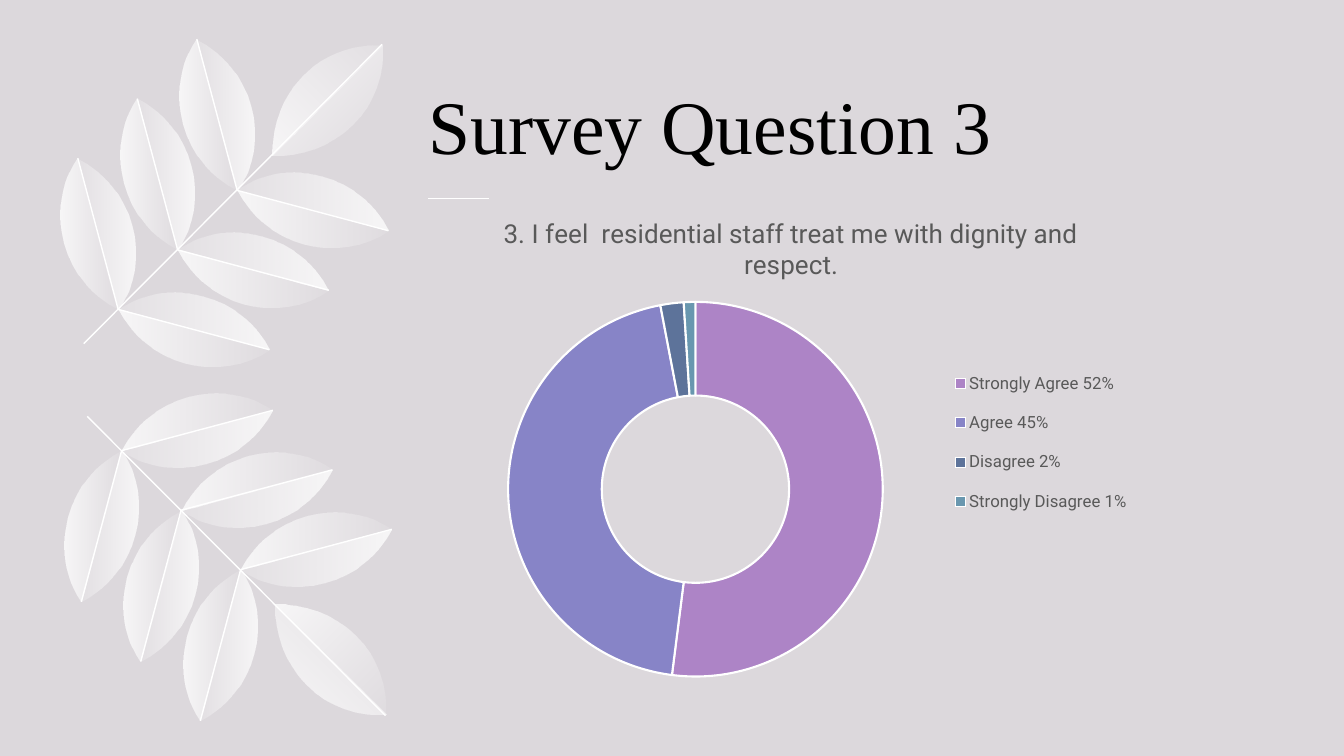
"""Build the survey question slide: two leafy branches, a title and a doughnut chart."""
from math import sqrt
from lxml.etree import SubElement
from pptx import Presentation
from pptx.chart.data import CategoryChartData
from pptx.dml.color import RGBColor
from pptx.enum.chart import XL_CHART_TYPE as ChartType, XL_LEGEND_POSITION as LegendPosition
from pptx.enum.shapes import MSO_CONNECTOR as Connector
from pptx.enum.text import MSO_ANCHOR as Anchor, PP_ALIGN as Align
from pptx.oxml import parse_xml
from pptx.oxml.ns import nsdecls, qn
from pptx.util import Pt

QUESTION = "3. I feel  residential staff treat me with dignity and respect."
ANSWERS = [
    ("Strongly Agree 52%", 52, "AD84C6"),
    ("Agree 45%", 45, "8784C7"),
    ("Disagree 2%", 2, "5D739A"),
    ("Strongly Disagree 1%", 1, "6997AF"),
]


def paint(target, color):
    target.solid()
    target.fore_color.rgb = RGBColor.from_string(color)


def draw_line(start, end):
    line = page.shapes.add_connector(Connector.STRAIGHT, *map(Pt, (*start, *end)))
    line.line.width = Pt(1)
    paint(line.line.fill, "FFFFFF")
    SubElement(line._element.spPr, qn("a:effectLst"))


deck = Presentation()
deck.slide_width, deck.slide_height = Pt(960), Pt(540)
page = deck.slides.add_slide(deck.slide_layouts[5])
paint(page.background.fill, "DCD8DC")
draw_line((306, 141.8), (349.2, 141.8))

LOWER = [(9.4, 18), (25.9, 32.4), (47.5, 38.2), (69.1, 43.9), (90.7, 40.3), (108, 28.8)]
UPPER = [(17.3, -11.5), (38.9, -15.8), (60.5, -9.4), (81.4, -4.3), (98.6, 10.8), (108, 28.8)]
END = [(20.2, 0.7), (41, -6.5), (56.9, -21.6), (72.7, -37.4), (79.9, -58), (78.5, -79)]
nodes = [(84.4 + 42.5 * step, 221 - 42.5 * step) for step in range(3)]
halves = []
for node in nodes:
    for curve, angle, fade in ((LOWER, 0, 10), (UPPER, 180, 20)):
        halves += [(node, curve, angle, fade, False), (node, curve, angle, fade, True)]
halves += [((194.4, 110.9), END, 45, 10, False), ((194.4, 110.9), END, 315, 20, True)]
veins = [((59.8, 245.5), (272.9, 31.7))]
for x, y in nodes:
    veins += [((x, y), (x + 108, y + 28.8)), ((x, y), (x - 28.8, y - 108))]

for shift, base, sign in ((0, 0, 1), (2.5, 542.9, -1)):
    for (x, y), curve, angle, fade, mirrored in halves:
        local = [(-v, -u) if mirrored else (u, v) for u, v in curve]
        ring = local[2:] + [(0, 0)] * 3 + local[:3]
        turned = [((u + v) / sqrt(2), sign * (v - u) / sqrt(2)) for u, v in ring]
        outline = [(Pt(u), Pt(v)) for u, v in turned]
        builder = page.shapes.build_freeform(*outline[0], scale=1.0)
        builder.add_line_segments(outline[1:], close=True)
        leaf = builder.convert_to_shape()
        across, down = leaf.left + leaf.width / 2, leaf.top + leaf.height / 2
        leaf.left = int(Pt(shift + x) + (across - sign * down) / sqrt(2) - leaf.width / 2)
        leaf.top = int(Pt(base + sign * y) + (sign * across + down) / sqrt(2) - leaf.height / 2)
        leaf.rotation = 45 * sign
        leaf.shadow.inherit = False
        leaf.line.fill.background()
        geometry = leaf._element.spPr.find(qn("a:custGeom"))
        segments = list(geometry.iter(qn("a:lnTo")))
        for first in range(0, 9, 3):
            bezier = parse_xml(f'<a:cubicBezTo {nsdecls("a")}/>')
            segments[first].addprevious(bezier)
            for segment in segments[first:first + 3]:
                bezier.append(segment[0])
                segment.getparent().remove(segment)
        stops = "".join(
            f'<a:gs pos="{place}"><a:srgbClr val="FFFFFF"><a:alpha val="{alpha * 1000}"/></a:srgbClr></a:gs>'
            for place, alpha in ((0, 80), (100000, fade)))
        geometry.addnext(parse_xml(
            f'<a:gradFill {nsdecls("a")} rotWithShape="0"><a:gsLst>{stops}</a:gsLst>'
            f'<a:lin ang="{angle * 60000}" scaled="0"/></a:gradFill>'))
    for vein in veins:
        draw_line(*[(shift + x, base + sign * y) for x, y in vein])

title = page.shapes.title
title.left, title.top, title.width, title.height = map(Pt, (306, 31, 609.1, 93.6))
frame = title.text_frame
frame_format = {"margin_left": 0, "margin_right": Pt(7.2), "margin_top": Pt(3.6),
                "margin_bottom": Pt(3.6), "vertical_anchor": Anchor.BOTTOM, "word_wrap": True}
for name, value in frame_format.items():
    setattr(frame, name, value)
para = frame.paragraphs[0]
para.alignment = Align.LEFT
span = para.add_run()
span.text = "Survey Question 3"
for name, value in {"name": "Times New Roman", "size": Pt(54)}.items():
    setattr(span.font, name, value)
paint(span.font.fill, "000000")

data = CategoryChartData()
data.categories = [answer for answer, share, color in ANSWERS]
data.add_series(QUESTION, [share for answer, share, color in ANSWERS])
chart = page.shapes.add_chart(
    ChartType.DOUGHNUT, *map(Pt, (267.8, 140.4, 594.7, 351.4)), data).chart
chart.has_title = chart.has_legend = True
chart.chart_title.include_in_layout = False
chart.legend.position = LegendPosition.RIGHT
chart.legend.include_in_layout = False
para = chart.chart_title.text_frame.paragraphs[0]
span = para.add_run()
span.text = QUESTION
for font, size, color in ((chart.font, 10, "000000"), (chart.legend.font, 12, "595959"),
                          (span.font, 18.6, "595959")):
    for name, value in {"name": "Roboto", "size": Pt(size), "bold": False}.items():
        setattr(font, name, value)
    paint(font.fill, color)

plot = chart.plots[0]
plot.vary_by_categories = True
plot._element.find(qn("c:holeSize")).set("val", "75")
for index, (answer, share, color) in enumerate(ANSWERS):
    point = plot.series[0].points[index].format
    paint(point.fill, color)
    paint(point.line.fill, "FFFFFF")
    point.line.width = Pt(1.5)

plot_area = chart._chartSpace.chart.plotArea
legend = chart.legend._element
for parent, place, target, box in (
        (plot_area, 0, '<c:layoutTarget val="inner"/>', (0.16, 0.21, 0.45, 0.77)),
        (legend, 1, "", (0.69, 0.32, 0.22, 0.36))):
    for old in parent.findall(qn("c:layout")):
        parent.remove(old)
    sizes = "".join(f'<c:{tag} val="{value}"/>' for tag, value in zip("xywh", box))
    parent.insert(place, parse_xml(
        f'<c:layout {nsdecls("c")}><c:manualLayout>{target}<c:xMode val="edge"/>'
        f'<c:yMode val="edge"/>{sizes}</c:manualLayout></c:layout>'))

deck.save("out.pptx")
